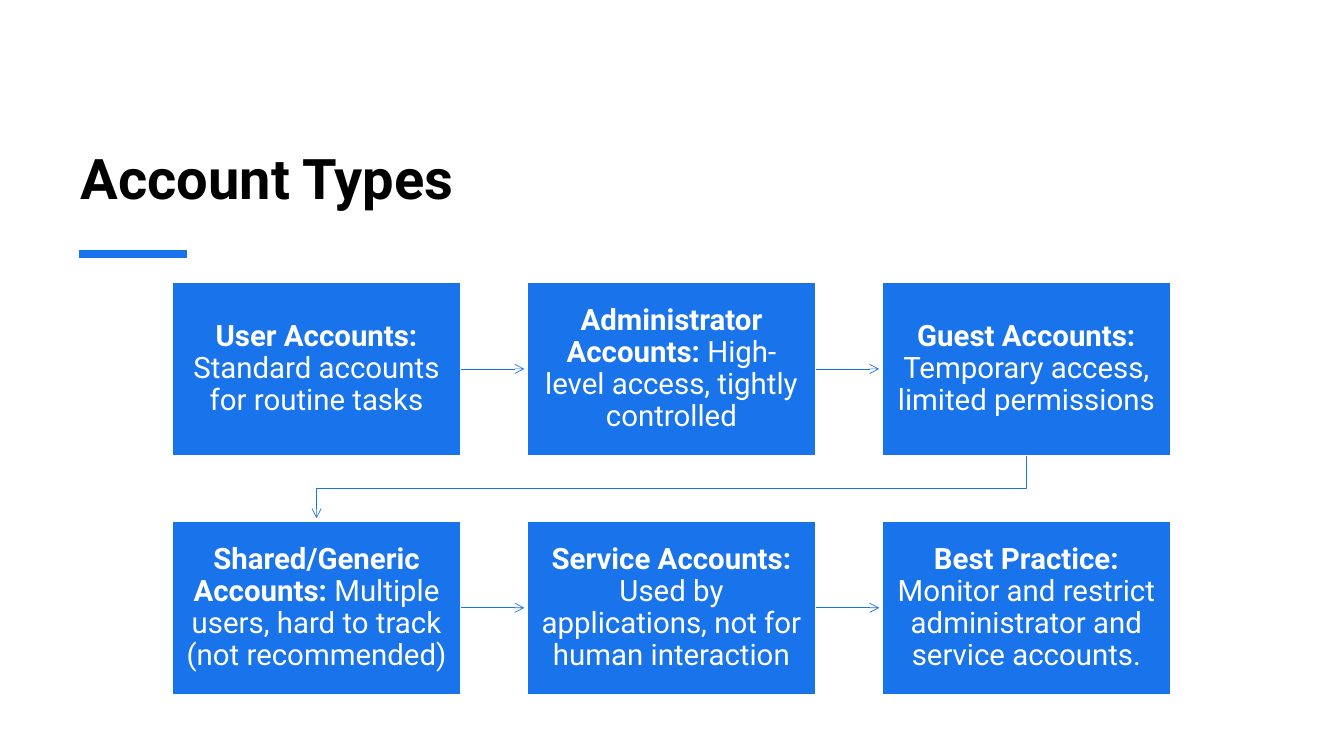
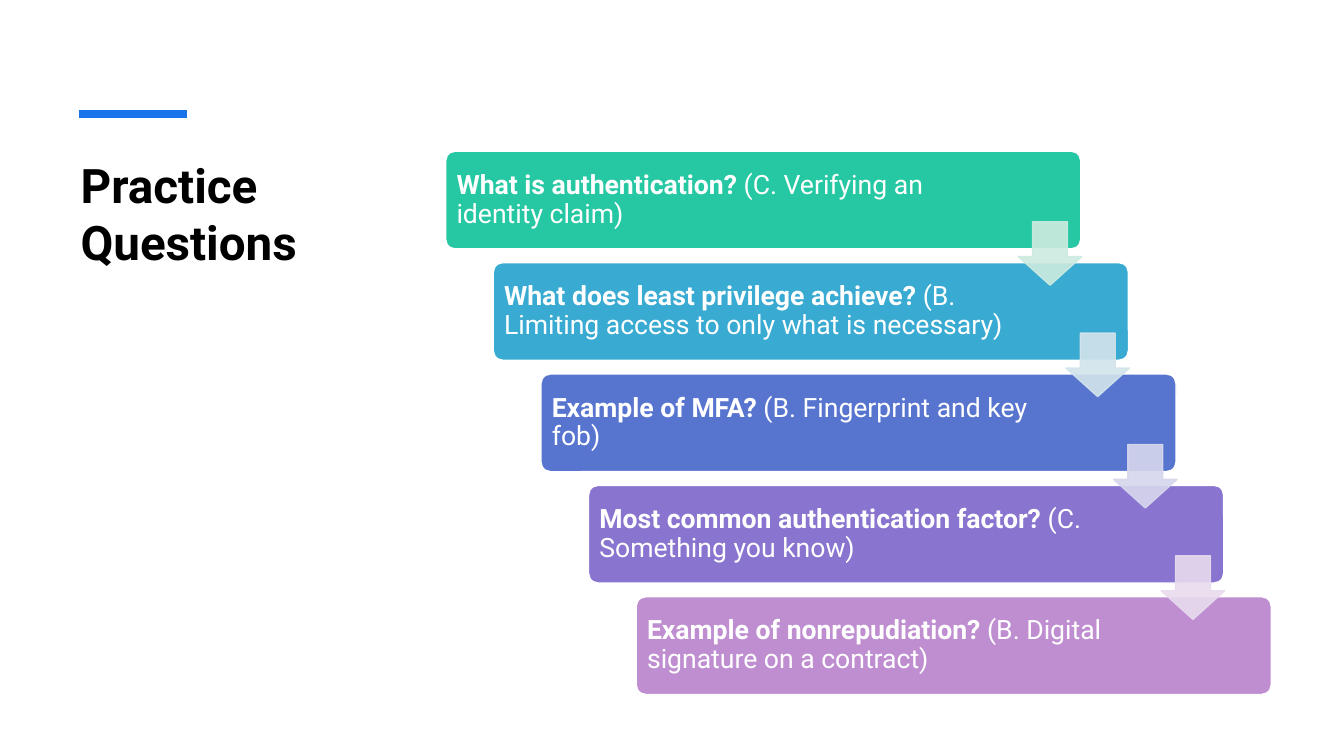
from lxml import etree
from pptx import Presentation
from pptx.dml.color import RGBColor
from pptx.enum.shapes import MSO_CONNECTOR as CONN, MSO_SHAPE as SHAPE
from pptx.enum.text import MSO_ANCHOR as ANCHOR, MSO_AUTO_SIZE as AUTO, PP_ALIGN as ALIGN
from pptx.oxml.ns import qn
from pptx.util import Inches, Pt

# Content
ACCOUNTS = [
    ("User Accounts:", " Standard accounts for routine tasks"),
    ("Administrator Accounts:", " High-level access, tightly controlled"),
    ("Guest Accounts:", " Temporary access, limited permissions"),
    ("Shared/Generic Accounts:", " Multiple users, hard to track (not recommended)"),
    ("Service Accounts:", " Used by applications, not for human interaction"),
    ("Best Practice:", " Monitor and restrict administrator and service accounts."),
]
# question, answer, bar colour, colour of the arrow to the next bar
QUESTIONS = [
    ("What is authentication?", " (C. Verifying an identity claim)", "green", "pale_green"),
    ("What does least privilege achieve?",
     " (B. Limiting access to only what is necessary)", "cyan", "pale_cyan"),
    ("Example of MFA?", " (B. Fingerprint and key fob)", "indigo", "pale_indigo"),
    ("Most common authentication factor?", " (C. Something you know)", "violet", "pale_violet"),
    ("Example of nonrepudiation?", " (B. Digital signature on a contract)", "orchid", None),
]

# Shared style
FONT = "Roboto"
COLORS = {
    "text": "000000", "white": "FFFFFF", "accent": "1973EB",
    "green": "25C8A2", "cyan": "39AAD1", "indigo": "5775CF",
    "violet": "8974CF", "orchid": "BF8ED1",
    "pale_green": "CDEBE0", "pale_cyan": "D2E4EC",
    "pale_indigo": "D7D7ED", "pale_violet": "E8DBEE",
}


def rgb(name):
    return RGBColor.from_string(COLORS[name])


def set_line(shape, color, width):
    shape.line.color.rgb = rgb(color)
    shape.line.width = Pt(width)


def add_arrowhead(shape):
    etree.SubElement(shape.line._get_or_add_ln(), qn("a:tailEnd"), type="arrow")


def add_line(s, x1, y1, x2, y2, width):
    line = s.shapes.add_connector(CONN.STRAIGHT, *map(Inches, (x1, y1, x2, y2)))
    set_line(line, "accent", width)
    etree.SubElement(line._element.spPr, qn("a:effectLst"))
    return line


def add_block(s, kind, box, fill, line="white", adjustments=()):
    sp = s.shapes.add_shape(kind, *map(Inches, box))
    sp.shadow.inherit = False
    sp.fill.solid()
    sp.fill.fore_color.rgb = rgb(fill)
    set_line(sp, line, 1)
    for i, value in enumerate(adjustments):
        sp.adjustments[i] = value
    return sp


def add_label(sp, lead, rest, size, align, insets):
    tf = sp.text_frame
    tf.word_wrap = True
    tf.vertical_anchor = ANCHOR.MIDDLE
    tf.margin_left, tf.margin_top, tf.margin_right, tf.margin_bottom = map(Inches, insets)
    p = tf.paragraphs[0]
    p.alignment = align
    p.line_spacing = 0.9
    for text, bold in ((lead, True), (rest, False)):
        r = p.add_run()
        r.text = text
        r.font.name, r.font.size, r.font.bold = FONT, Pt(size), bold
        r.font.color.rgb = rgb("white")


def add_titled_slide(prs, title, box, size, anchor, accent_y):
    s = prs.slides.add_slide(prs.slide_layouts[5])
    sp = s.shapes.title
    sp.left, sp.top, sp.width, sp.height = map(Inches, box)
    tf = sp.text_frame
    tf.text = title
    tf.word_wrap = True
    tf.auto_size = AUTO.NONE
    tf.vertical_anchor = anchor
    p = tf.paragraphs[0]
    p.alignment = ALIGN.LEFT
    font = p.runs[0].font
    font.name, font.size, font.bold = FONT, Pt(size), True
    font.color.rgb = rgb("text")
    add_line(s, 0.78, accent_y, 1.85, accent_y, 6)
    return s


def build_accounts(prs):
    s = add_titled_slide(prs, "Account Types", (0.7, 0.62, 11.91, 1.52), 40,
                         ANCHOR.BOTTOM, 2.52)
    columns, left, top, width, height = 3, 1.71, 2.8, 2.86, 1.72
    gap_x, gap_y, clearance = 0.66, 0.65, 0.03

    # Cards, each joined to the next one in its row
    for i, (lead, rest) in enumerate(ACCOUNTS):
        row, col = divmod(i, columns)
        x, y = left + col * (width + gap_x), top + row * (height + gap_y)
        card = add_block(s, SHAPE.RECTANGLE, (x, y, width, height), "accent")
        add_label(card, lead, rest, 21, ALIGN.CENTER, (0.14, 0.15, 0.14, 0.15))
        if col < columns - 1:
            right, middle = x + width, y + height / 2
            arrow = add_line(s, right, middle, right + gap_x - clearance, middle, 0.5)
            arrow.begin_connect(card, 3)
            add_arrowhead(arrow)

    # Bent arrow from the end of the first row to the start of the second
    first_x = left + width / 2
    last_x = first_x + (columns - 1) * (width + gap_x)
    bottom = top + height
    bend = bottom + gap_y / 2
    points = [(first_x, bend), (first_x, bottom + gap_y - clearance)]
    points.insert(0, (last_x, bend))
    builder = s.shapes.build_freeform(Inches(last_x), Inches(bottom))
    builder.add_line_segments([(Inches(x), Inches(y)) for x, y in points], close=False)
    bent = builder.convert_to_shape()
    bent.shadow.inherit = False
    bent.fill.background()
    set_line(bent, "accent", 0.5)
    add_arrowhead(bent)


def build_questions(prs):
    s = add_titled_slide(prs, "Practice Questions", (0.7, 1.5, 2.9, 4.54), 34,
                         ANCHOR.TOP, 1.13)
    (x0, y0), (x1, y1) = (4.42, 1.5), (6.31, 5.92)
    steps = len(QUESTIONS) - 1
    corners = [(x0 + i * (x1 - x0) / steps, y0 + i * (y1 - y0) / steps)
               for i in range(len(QUESTIONS))]

    # Staircase of bars
    for (x, y), (lead, rest, color, _) in zip(corners, QUESTIONS):
        bar = add_block(s, SHAPE.ROUNDED_RECTANGLE, (x, y, 6.3, 0.97), color,
                        adjustments=[0.1])
        add_label(bar, lead, rest, 19, ALIGN.LEFT, (0.08, 0.08, 1.2, 0.08))

    # Translucent arrows between bars
    for (x, y), (*_, color) in zip(corners[:-1], QUESTIONS):
        arrow = add_block(s, SHAPE.DOWN_ARROW, (x + 5.68, y + 0.7, 0.63, 0.63),
                          color, color, [0.45, 0.55])
        arrow.adjustments[0], arrow.adjustments[1] = 0.55, 0.45
        for clr in arrow._element.spPr.iter(qn("a:srgbClr")):
            etree.SubElement(clr, qn("a:alpha"), val="90000")


def main():
    prs = Presentation()
    prs.slide_width, prs.slide_height = Inches(13.33), Inches(7.5)
    build_accounts(prs)
    build_questions(prs)
    prs.save("out.pptx")


if __name__ == "__main__":
    main()
